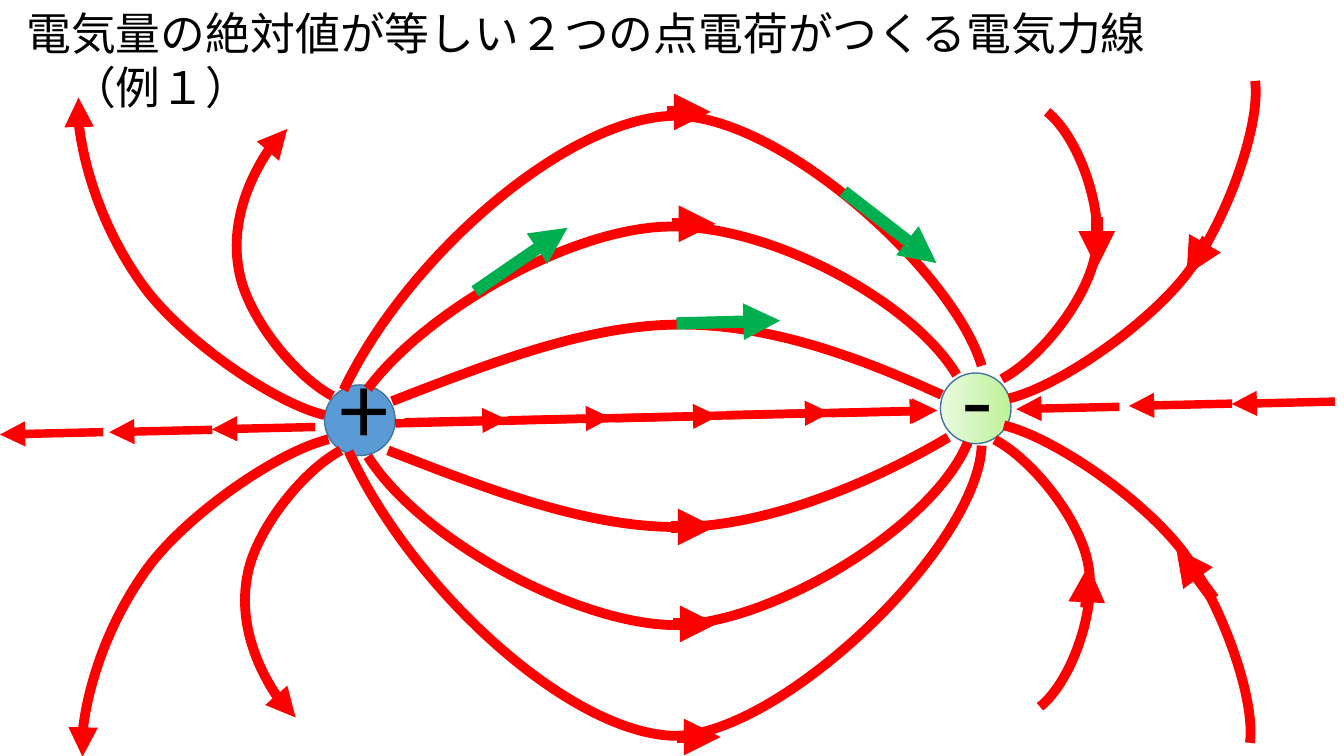
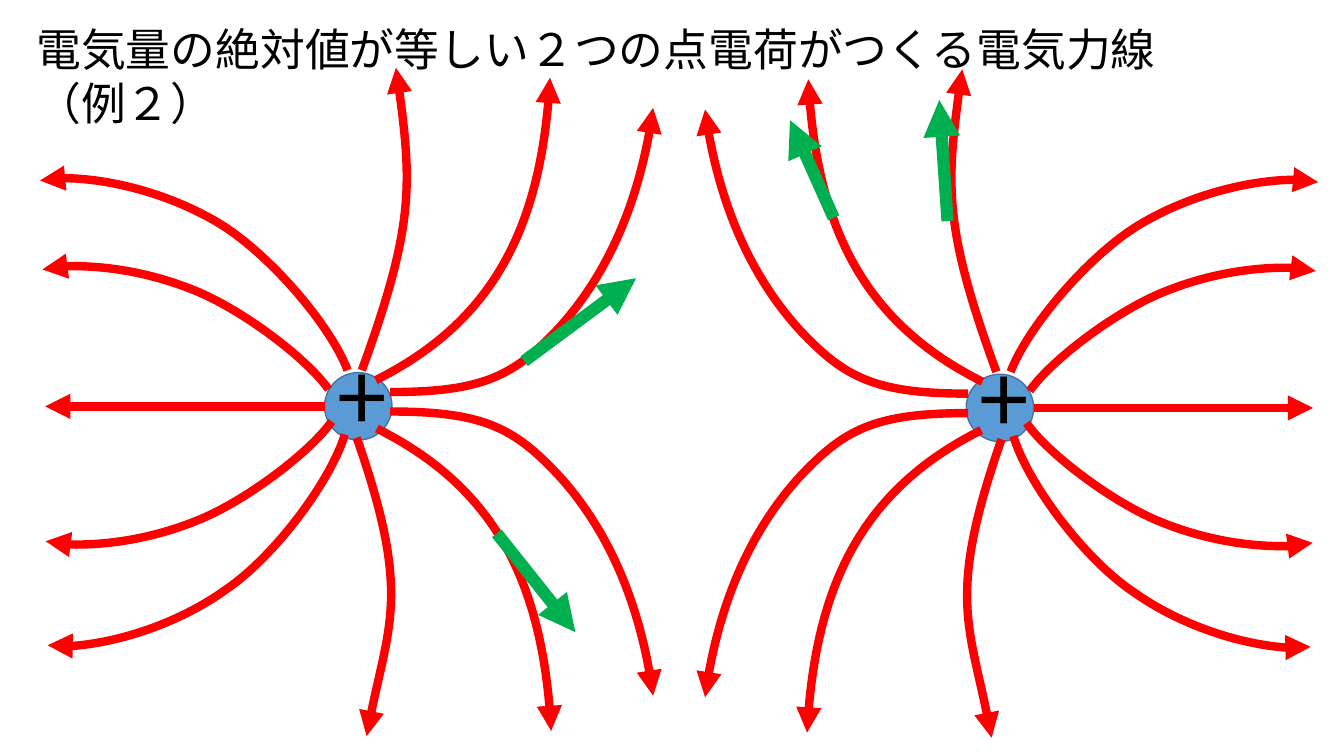
import lxml.etree
import pptx
import pptx.dml.color
import pptx.enum.shapes
import pptx.enum.text
import pptx.oxml.ns
import pptx.util

COLOURS = {
    "text": "000000",
    "field": "FF0000",
    "tangent": "00B050",
    "positive": "5B9BD5",
    "negative_deep": "BEF297",
    "negative_pale": "EAFAE0",
    "outline": "43739E",
}
FONT = "Noto Sans CJK JP"
TITLE = "電気量の絶対値が等しい２つの点電荷がつくる電気力線"

AXIS_STEP = (2.6, -0.06)
INWARD_AXIS = [(1.12, 0.05), (3.73, 0), (6.43, -0.05), (9.25, -0.13), (11.89, -0.18)]
OUTWARD_AXIS = [(-9.07, 0.36), (-6.32, 0.3), (-3.73, 0.23),
                (16.54, -0.28), (19.38, -0.36), (21.97, -0.41)]
JOINING_LINES = [
    [(0.81, -0.48), (3.23, -1.42), (5.69, -2.39), (8, -2.41),
     (10.31, -2.44), (12.62, -1.57), (14.66, -0.64)],
    [(0.2, -0.79), (1.65, -2.74), (5.28, -4.83), (7.77, -4.88),
     (10.24, -4.95), (13.89, -3.05), (15.04, -1.14)],
    [(-0.41, -0.76), (1.17, -4.09), (5.16, -7.57), (7.85, -7.67),
     (10.52, -7.77), (14.96, -3.76), (15.67, -1.37)],
    [(0.71, 0.76), (3.12, 1.7), (5.61, 2.67), (7.9, 2.69),
     (10.21, 2.72), (12.95, 1.55), (14.83, 0.43)],
    [(0.2, 0.91), (1.52, 3), (5.38, 5.08), (7.82, 5.16),
     (10.26, 5.21), (14.43, 2.72), (15.32, 0.56)],
    [(-0.28, 0.79), (1.3, 4.22), (5.21, 7.82), (7.85, 7.95),
     (10.49, 8.05), (15.57, 3.23), (15.67, 0.64)],
]
APEX_ARROWS = [(7.75, -7.77), (7.87, -4.95), (7.85, 2.69), (7.9, 5.13), (8, 7.98)]
INCOMING_ARROWS = [
    ((18.57, -5.11), (18.57, -3.84)), ((21.36, -4.57), (20.83, -3.66)),
    ((21.51, 4.5), (20.57, 3.23)), ((18.31, 4.72), (18.36, 3.66)),
]
SHORT_TAIL = [(-0.99, -0.53), (-2.18, -2.06), (-2.36, -3.18),
              (-2.57, -4.29), (-1.93, -6.1), (-1.14, -6.73)]
LONG_TAIL = [(-1.24, -0.3), (-3.4, -1.78), (-4.45, -3.1),
             (-5.49, -4.45), (-6.35, -6.91), (-6.2, -8)]
LEFT_TAILS = [
    ((-0.69, -0.61), SHORT_TAIL, (1, 1)), ((-0.89, -0.13), LONG_TAIL, (1, 1)),
    ((-0.48, 0.76), SHORT_TAIL, (1, -1)), ((-0.79, 0.48), LONG_TAIL, (1, -1)),
]
RIGHT_TAILS = [
    ((0.66, -0.74), SHORT_TAIL, (-1, 1)), ((0.84, -0.25), LONG_TAIL, (-1, 1)),
    ((0.48, 0.79), SHORT_TAIL, (-1, -1)), ((0.71, 0.43), LONG_TAIL, (-1, -1)),
]
ATTRACTION_TANGENTS = [
    ((7.98, -2.44), (10.59, -2.51)), ((2.9, -3.25), (5.23, -4.85)),
    ((12.19, -5.77), (14.53, -3.96)),
]

FACING = [(2.36, 0), (3.12, -0.41), (4.24, -1.6),
          (5.33, -2.79), (6.32, -4.75), (6.63, -7.16)]
RISING = [(2.95, -1.47), (4.22, -4.09), (4.39, -7.62)]
SIDEWAYS = [(-0.53, -0.76), (-2.11, -1.96), (-3.3, -2.46),
            (-4.52, -2.97), (-6.48, -3.25), (-7.21, -3.02)]
REPULSION_LINES = [
    ((0.8, -0.36), FACING, 1), ((0.8, 0.13), FACING, -1),
    ((0.44, -0.66), RISING, 1), ((0.47, 0.56), RISING, -1),
    ((0.09, -0.91), [(1.3, -3.56), (1.27, -4.85), (0.86, -7.62)], 1),
    ((-0.04, 0.79), [(1.35, 3.86), (0.76, 4.78), (0.25, 7.52)], 1),
    ((-0.34, 0.71), [(-0.33, 1.12), (-1.73, 3.05), (-3, 3.91),
                     (-4.24, 4.8), (-6.5, 5.49), (-7.49, 5.31)], 1),
    ((-0.27, -0.91), [(-0.41, -1.09), (-1.9, -2.87), (-3.2, -3.68),
                      (-4.5, -4.47), (-6.78, -5.03), (-7.75, -4.78)], 1),
    ((-0.75, -0.43), SIDEWAYS, 1), ((-0.67, 0.38), SIDEWAYS, -1),
]
REPULSION_TANGENTS = [
    ((14.85, -4.67), (14.64, -7.72)), ((4.18, -1.14), (7, -3.23)),
    ((3.49, 3.2), (5.47, 5.69)), ((11.98, -4.75), (10.88, -7.21)),
]


def rgb(name):
    """Return a named colour."""
    return pptx.dml.color.RGBColor.from_string(COLOURS[name])


def shift(origin, offset, flip=(1, 1)):
    """Move a point by an offset that may be mirrored."""
    return tuple(o + d * f for o, d, f in zip(origin, offset, flip))


def child(parent, tag, **attributes):
    """Append a drawing element."""
    return lxml.etree.SubElement(parent, pptx.oxml.ns.qn(tag), **attributes)


def write(para, text, size):
    """Add one formatted run."""
    span = para.add_run()
    span.text = text
    span.font.size = pptx.util.Pt(size)
    span.font.name = FONT
    span.font.color.rgb = rgb("text")
    child(span.font._element, "a:ea", typeface=FONT)


def style_line(shape, colour, width, head):
    """Set colour, width and arrowhead of a line."""
    shape.line.color.rgb = rgb(colour)
    shape.line.width = pptx.util.Pt(width)
    if head:
        child(shape.line._get_or_add_ln(), "a:tailEnd", type="triangle")


def add_arrow(page, start, end, width=6, colour="field"):
    """Draw a straight arrow."""
    arrow = page.shapes.add_connector(
        pptx.enum.shapes.MSO_CONNECTOR.STRAIGHT,
        *(pptx.util.Cm(value) for value in (*start, *end)))
    style_line(arrow, colour, width, True)
    child(arrow.element.spPr, "a:effectLst")


def add_curve(page, points, width, head):
    """Draw a chain of cubic curves through a start point and triples of points."""
    start, *others = [tuple(pptx.util.Cm(value) for value in point) for point in points]
    builder = page.shapes.build_freeform(*start)
    builder.add_line_segments(others, close=False)
    curve = builder.convert_to_shape()
    segments = list(curve.element.iter(pptx.oxml.ns.qn("a:lnTo")))
    outline = segments[0].getparent()
    for first in range(0, len(segments), 3):
        cubic = child(outline, "a:cubicBezTo")
        for segment in segments[first:first + 3]:
            cubic.append(segment[0])
            outline.remove(segment)
    curve.fill.background()
    curve.shadow.inherit = False
    style_line(curve, "field", width, head)


def add_tail(page, centre, start, offsets, flip, width, head=True):
    """Draw a curve that leaves a charge, mirrored as asked."""
    root = shift(centre, start)
    add_curve(page, [root] + [shift(root, offset, flip) for offset in offsets], width, head)


def add_tangents(page, origin, tangents):
    """Draw the field direction arrows."""
    for start, end in tangents:
        add_arrow(page, shift(origin, start), shift(origin, end), 8.75, "tangent")


def add_charge(page, centre, diameter, sign):
    """Draw a point charge with its sign."""
    group = page.shapes.add_group_shape()
    left, top = shift(centre, (-diameter / 2, -diameter / 2))
    ball = group.shapes.add_shape(
        pptx.enum.shapes.MSO_SHAPE.OVAL, pptx.util.Cm(left), pptx.util.Cm(top),
        pptx.util.Cm(diameter), pptx.util.Cm(diameter))
    ball.shadow.inherit = False
    if sign == "+":
        ball.fill.solid()
        ball.fill.fore_color.rgb = rgb("positive")
    else:
        ball.fill.gradient()
        ball.fill.gradient_angle = 180
        for stop, name in zip(ball.fill.gradient_stops, ("negative_deep", "negative_pale")):
            stop.color.rgb = rgb(name)
    style_line(ball, "outline", 1, False)
    left, top = shift(centre, (-0.8, -1.8))
    box = group.shapes.add_textbox(
        pptx.util.Cm(left), pptx.util.Cm(top), pptx.util.Cm(1.68), pptx.util.Cm(3.07))
    box.text_frame.word_wrap = False
    box.text_frame.vertical_anchor = pptx.enum.text.MSO_ANCHOR.MIDDLE
    para = box.text_frame.paragraphs[0]
    para.alignment = pptx.enum.text.PP_ALIGN.CENTER
    write(para, sign, 66)


def add_page(deck, left, top, example):
    """Add a title-only slide with its two-line title."""
    page = deck.slides.add_slide(deck.slide_layouts[5])
    box = page.shapes.title
    box.left, box.top = pptx.util.Cm(left), pptx.util.Cm(top)
    box.width, box.height = pptx.util.Cm(32.77), pptx.util.Cm(3)
    frame = box.text_frame
    frame.word_wrap = True
    frame.auto_size = pptx.enum.text.MSO_AUTO_SIZE.NONE
    frame.vertical_anchor = pptx.enum.text.MSO_ANCHOR.TOP
    for para, text in zip((frame.paragraphs[0], frame.add_paragraph()), (TITLE, example)):
        para.alignment = pptx.enum.text.PP_ALIGN.JUSTIFY
        para.line_spacing = pptx.util.Pt(38.6)
        para.space_before = pptx.util.Pt(0)
        write(para, text, 32)
    return page


def draw_attraction(page, left, right):
    """Draw the field between a positive and a negative charge."""
    add_charge(page, left, 1.78, "+")
    add_charge(page, right, 1.78, "-")
    for start in INWARD_AXIS:
        root = shift(left, start)
        add_arrow(page, root, shift(root, AXIS_STEP))
    for end in OUTWARD_AXIS:
        tip = shift(left, end)
        add_arrow(page, shift(tip, AXIS_STEP), tip)
    for points in JOINING_LINES:
        add_curve(page, [shift(left, point) for point in points], 7, False)
    add_arrow(page, shift(left, (0.89, 0.08)), shift(left, (14.55, -0.25)))
    add_tangents(page, left, ATTRACTION_TANGENTS)
    for centre, tails, head in ((left, LEFT_TAILS, True), (right, RIGHT_TAILS, False)):
        for start, offsets, flip in tails:
            add_tail(page, centre, start, offsets, flip, 7, head)
    apexes = [(start, shift(start, (1.09, 0))) for start in APEX_ARROWS]
    for start, end in apexes + INCOMING_ARROWS:
        add_arrow(page, shift(left, start), shift(left, end), 8.75)


def draw_repulsion(page, left, right):
    """Draw the mirrored fields of two positive charges."""
    for centre, side in ((left, 1), (right, -1)):
        add_charge(page, centre, 1.7, "+")
        for start, offsets, upright in REPULSION_LINES:
            add_tail(page, centre, (start[0] * side, start[1]), offsets, (side, upright), 6)
        add_arrow(page, shift(centre, (-0.85 * side, 0)), shift(centre, (-7.89 * side, 0)))
    add_tangents(page, left, REPULSION_TANGENTS)


def main():
    """Build and save the deck."""
    deck = pptx.Presentation()
    deck.slide_width, deck.slide_height = pptx.util.Cm(33.87), pptx.util.Cm(19.05)
    draw_attraction(add_page(deck, 0.41, 0, "\u3000（例１）".replace("\u3000", "　")),
                    (9.07, 10.59), (24.59, 10.29))
    draw_repulsion(add_page(deck, 0.66, 0.41, "（例２）"), (9.03, 10.24), (25.2, 10.28))
    deck.save("out.pptx")


if __name__ == "__main__":
    main()
